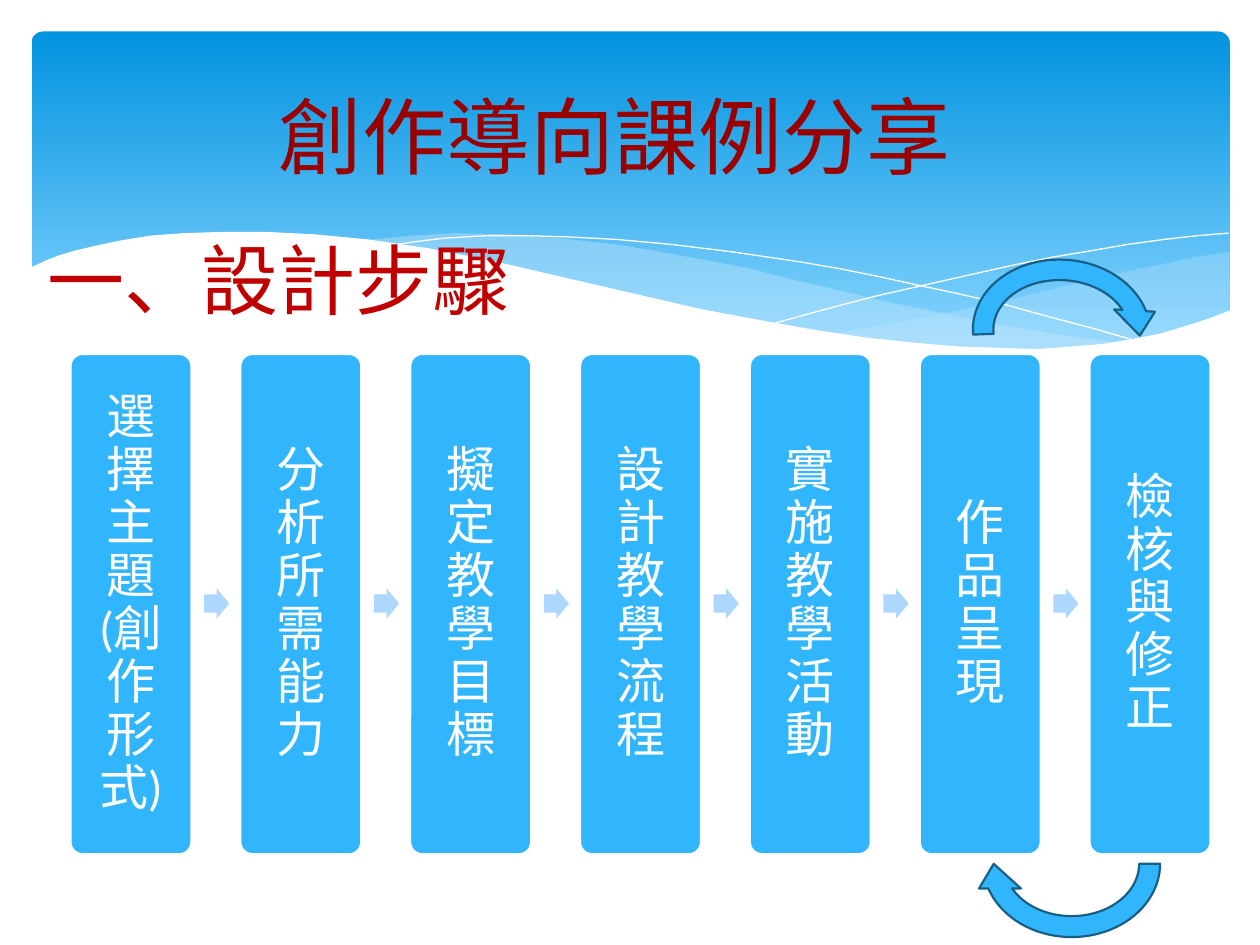
from lxml.etree import SubElement
from pptx import Presentation
from pptx.dml.color import RGBColor
from pptx.enum.shapes import MSO_SHAPE
from pptx.enum.text import MSO_ANCHOR, PP_ALIGN
from pptx.oxml.ns import qn
from pptx.util import Inches, Pt

TITLE = "創作導向課例分享"
HEAD = "一、設計步驟"
STEPS = ["選擇主題(創作形式)", "分析所需能力", "擬定教學目標", "設計教學流程",
         "實施教學活動", "作品呈現", "檢核與修正"]
THEME = dict(font="Calibri", title=48, head=44, step=28,
             dark="990000", red="C00000", white="FFFFFF", blue="31B6FD",
             pale="AED7FE", edge="195F84", mist="C6E7FC",
             top="0293E0", low="83D3FE")

RIGHT = [(9.76, 2), (9.48, 2.04), (9.21, 2.1), (8.91, 2.16), (8.61, 2.23),
         (8.05, 2.37), (7.53, 2.48), (7.06, 2.57), (6.61, 2.65), (6.91, 2.69),
         (7.19, 2.72), (7.45, 2.75), (7.69, 2.77), (8.03, 2.78), (8.35, 2.77),
         (8.63, 2.75), (8.89, 2.72), (9.13, 2.67), (9.35, 2.62), (9.49, 2.57),
         (9.63, 2.52), (9.76, 2.47)]
BAND = [(8.93, 2.73), (8.66, 2.69), (8.37, 2.65), (8.07, 2.6), (7.75, 2.54),
        (7.41, 2.47), (7.06, 2.4), (6.68, 2.31), (6.29, 2.22), (5.98, 2.14),
        (5.69, 2.08), (5.41, 2.03), (5.14, 1.98), (4.89, 1.94), (4.42, 1.89),
        (3.99, 1.86), (3.61, 1.85), (3.28, 1.87), (2.86, 1.91), (3.23, 1.96),
        (3.62, 2.03), (4.04, 2.11), (4.49, 2.22), (4.91, 2.32), (5.3, 2.4),
        (5.66, 2.48), (6.01, 2.55), (6.34, 2.61), (6.65, 2.66), (6.95, 2.7),
        (7.22, 2.74), (7.48, 2.76), (7.73, 2.77), (7.96, 2.78), (8.28, 2.78),
        (8.57, 2.77), (8.76, 2.75)]
FALL = [(3.09, 1.95), (3.28, 1.92), (3.53, 1.89), (3.87, 1.87), (4.16, 1.87),
        (4.5, 1.88), (4.89, 1.9), (5.33, 1.94), (5.82, 2), (6.36, 2.08),
        (6.65, 2.13), (6.95, 2.19), (7.27, 2.26), (7.6, 2.33), (7.95, 2.41),
        (8.31, 2.51), (8.69, 2.61), (9.07, 2.72)]
RISE = [(6.13, 2.57), (6.53, 2.46), (6.95, 2.35), (7.48, 2.23), (8.06, 2.1),
        (8.36, 2.04), (8.66, 1.99), (8.95, 1.94), (9.24, 1.9), (9.51, 1.87),
        (9.75, 1.85)]
BASE = [(9.77, 2.46), (9.59, 2.53), (9.4, 2.59), (9.2, 2.65), (8.99, 2.69),
        (8.75, 2.73), (8.5, 2.75), (8.23, 2.77), (7.93, 2.76), (7.61, 2.75),
        (7.26, 2.72), (6.88, 2.68), (6.48, 2.62), (6.03, 2.54), (5.55, 2.45),
        (5.03, 2.33), (4.47, 2.2), (3.91, 2.07), (3.4, 1.97), (2.92, 1.9),
        (2.5, 1.86), (2.11, 1.84), (1.77, 1.84), (1.46, 1.85), (1.19, 1.87),
        (0.95, 1.91), (0.76, 1.95), (0.59, 1.99), (0.46, 2.03), (0.36, 2.07),
        (0.23, 2.13), (0.23, 3.29), (9.77, 3.29)]
WAVES = [(RIGHT, "mist", 29), (BAND, "mist", 40), (FALL, None, 100),
         (RISE, None, 100), (BASE, "white", 100)]
LOOPS = [((7.72, 6.19, 1.57, 1.33), 180, []),
         ((7.64, 1.98, 1.57, 1.3), 3.2,
          [0.125, 11.423, 204.577, 104.799, 0.125])]
LEFT, STEP, TOP, WIDE, TALL = 0.56, 1.348, 2.81, 0.96, 3.97


def tint(name):
    return RGBColor.from_string(THEME[name])


def paint(shape, fill=None, line=None, width=1.25):
    shape.shadow.inherit = False
    if fill:
        shape.fill.solid()
        shape.fill.fore_color.rgb = tint(fill)
    else:
        shape.fill.background()
    if line:
        shape.line.color.rgb = tint(line)
        shape.line.width = Pt(width)
    else:
        shape.line.fill.background()


def add(slide, kind, box, adj=(), fill=None, line=None):
    shape = slide.shapes.add_shape(kind, *map(Inches, box))
    for i, value in enumerate(adj):
        shape.adjustments[i] = value
    paint(shape, fill, line)
    return shape


def write(shape, text, size, color, align=PP_ALIGN.CENTER,
          anchor=MSO_ANCHOR.MIDDLE):
    frame = shape.text_frame
    frame.word_wrap = True
    frame.vertical_anchor = anchor
    para = frame.paragraphs[0]
    para.alignment = align
    run = para.add_run()
    run.text = text
    run.font.name = THEME["font"]
    run.font.size = Pt(THEME[size])
    run.font.color.rgb = tint(color)
    return frame


def wave(slide, points, fill, alpha):
    spots = [(Inches(x), Inches(y)) for x, y in points]
    pen = slide.shapes.build_freeform(*spots[0])
    pen.add_line_segments(spots[1:], close=bool(fill))
    shape = pen.convert_to_shape()
    paint(shape, fill, None if fill else "white", 0)
    if alpha < 100:
        color = shape.fill._xPr.find(qn("a:solidFill"))[0]
        SubElement(color, qn("a:alpha")).set("val", str(alpha * 1000))


def main():
    """Build the slide of design steps and save it."""
    deck = Presentation()
    deck.slide_width, deck.slide_height = Inches(10), Inches(7.5)
    slide = deck.slides.add_slide(deck.slide_layouts[6])

    sky = add(slide, MSO_SHAPE.ROUNDED_RECTANGLE, (0.25, 0.25, 9.51, 2.7), [0.034])
    sky.fill.gradient()
    sky.fill.gradient_angle = 270
    for stop, spot, name in zip(sky.fill.gradient_stops, (0, 0.9), ("top", "low")):
        stop.position = spot
        stop.color.rgb = tint(name)
    for item in WAVES:
        wave(slide, *item)

    title = slide.shapes.add_textbox(*map(Inches, (0.58, 0.6, 8.59, 0.94)))
    write(title, TITLE, "title", "dark")

    for i, text in enumerate(STEPS):
        x = LEFT + i * STEP
        card = add(slide, MSO_SHAPE.ROUNDED_RECTANGLE, (x, TOP, WIDE, TALL),
                   [0.1], "blue", "white")
        frame = write(card, text, "step", "white")
        frame.margin_left = frame.margin_right = Inches(0.12)
        frame.margin_top = frame.margin_bottom = Inches(0.12)
        frame.paragraphs[0].line_spacing = 0.9
        if i < len(STEPS) - 1:
            add(slide, MSO_SHAPE.RIGHT_ARROW, (x + 1.06, 4.67, 0.2, 0.24),
                [0.6, 0.5], "pale")

    for box, turn, adj in LOOPS:
        loop = add(slide, MSO_SHAPE.CIRCULAR_ARROW, box, adj, "blue", "edge")
        loop.rotation = turn

    head = slide.shapes.add_textbox(*map(Inches, (0.28, 1.8, 4.25, 0.84)))
    write(head, HEAD, "head", "red", PP_ALIGN.LEFT, MSO_ANCHOR.TOP)
    deck.save("out.pptx")


if __name__ == "__main__":
    main()
